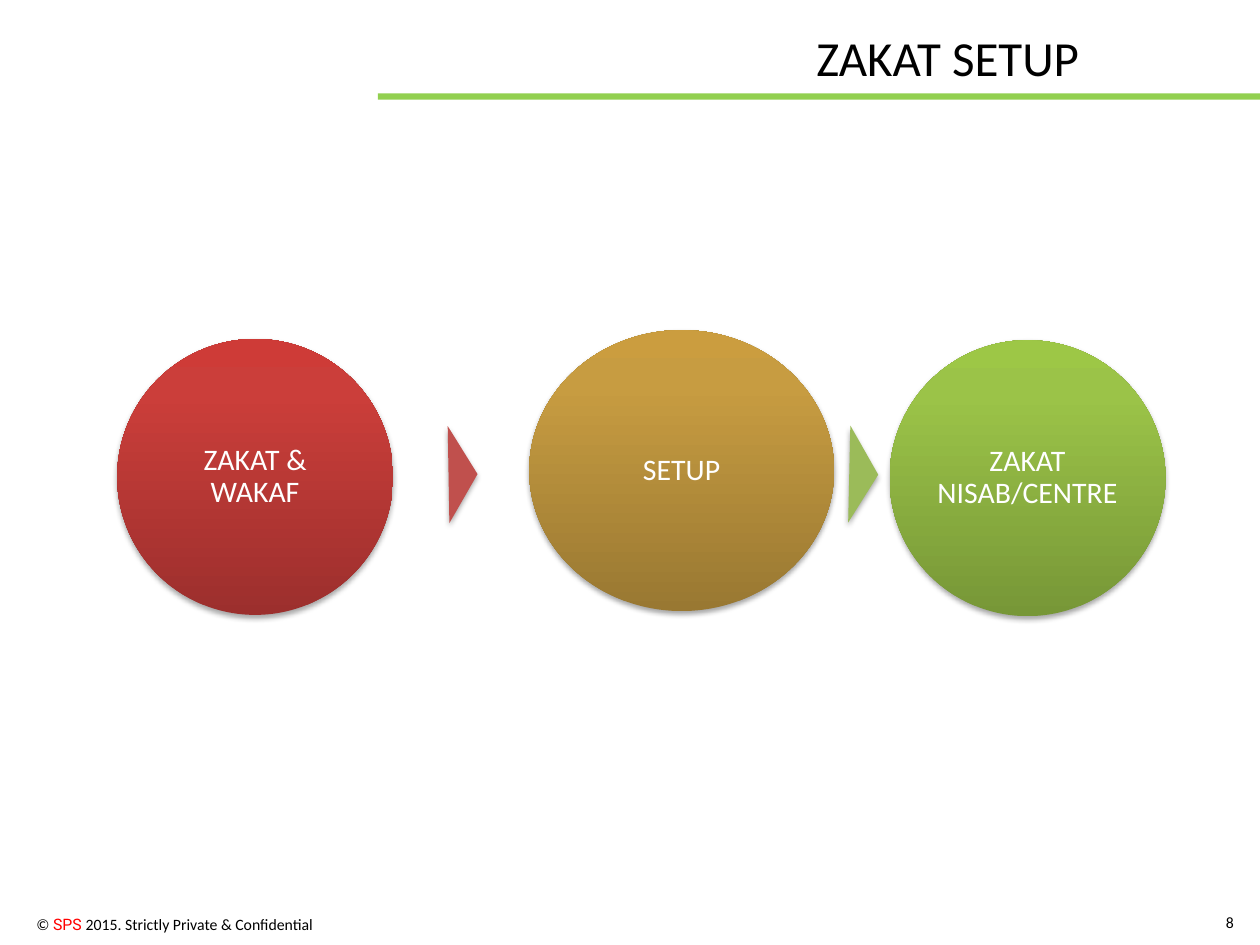
from lxml import etree
from pptx import Presentation, util as u
from pptx.dml.color import RGBColor
from pptx.enum import shapes, text
from pptx.oxml import parse_xml
from pptx.oxml.ns import nsdecls

COLUMNS, ROWS = 100, 75  # square grid over the slide
CELL = u.Inches(10) // COLUMNS
SHAPE = shapes.MSO_SHAPE
ALIGN = text.PP_ALIGN
MIDDLE = text.MSO_ANCHOR.MIDDLE


def color(value):
    return RGBColor.from_string(value)


def place(box, left, top, width, height):
    """Turn grid lengths inside a region into slide lengths."""
    return [round(n * CELL) for n in (box[0] + left, box[1] + top, width, height)]


def write(frame, runs, size, align=ALIGN.LEFT, **formats):
    for name, value in formats.items():
        setattr(frame, name, value)
    paragraph = frame.paragraphs[0]
    paragraph.alignment = align
    for words, font_name, ink in runs:
        run = paragraph.add_run()
        run.text = words
        for name, value in {"name": font_name, "size": u.Pt(size)}.items():
            setattr(run.font, name, value)
        run.font.color.rgb = color(ink)
    return paragraph


def add_plain(slide, kind, position, fill=None):
    shape = slide.shapes.add_shape(kind, *position)
    shape.shadow.inherit = False
    shape.line.fill.background()
    if fill:
        shape.fill.solid()
        shape.fill.fore_color.rgb = color(fill)
    return shape


def add_shadow(shape):
    effects = shape._element.spPr.find("{*}effectLst")
    effects.append(parse_xml(
        f'<a:outerShdw {nsdecls("a")} blurRad="{u.Pt(3.1)}" dist="{u.Pt(1.8)}" '
        'dir="5400000" rotWithShape="0"><a:srgbClr val="000000">'
        '<a:alpha val="35000"/></a:srgbClr></a:outerShdw>'))


def shade_upwards(shape, stops):
    """Three-stop gradient running from the bottom to the top."""
    shape.fill.gradient()
    shape.fill.gradient_angle = 90
    stop_list = shape._element.spPr.find("{*}gradFill/{*}gsLst")
    for old in list(stop_list):
        stop_list.remove(old)
    for percent, value in zip((0, 80, 100), stops):
        stop = etree.SubElement(stop_list, stop_list.tag.replace("gsLst", "gs"),
                                pos=str(percent * 1000))
        etree.SubElement(stop, stop.tag.replace("}gs", "}srgbClr"), val=value)


def add_header(slide, box):
    # Green rule along the bottom of the header
    add_plain(slide, SHAPE.RECTANGLE, place(box, 0, 5.7, box[2], 0.5), "92D050")
    title = slide.shapes.add_textbox(*place(box, 33.8, 0, 23.1, 5.7))
    write(title.text_frame, [("ZAKAT SETUP", "Calibri", "000000")], 28,
          word_wrap=False)


def add_flow(slide, box):
    steps = [  # label, left, top, width, height, gradient
        ("ZAKAT & WAKAF", 0, 0.7, 21.9, 21.9, ("9C2F2D", "CB3E3A", "CE3B37")),
        ("SETUP", 32.7, 0, 24.2, 22.3, ("997832", "C79C41", "CB9D3F")),
        ("ZAKAT NISAB/CENTRE", 61.3, 0.8, 21.9, 21.9,
         ("779737", "9BC348", "9DC746")),
    ]
    arrows = [(23.6, 89, "C0504D"), (55.4, 91.3, "9BBB59")]
    insets = {f"margin_{side}": u.Inches(0.02)
              for side in ("left", "top", "right", "bottom")}

    # Step circles
    for label, left, top, width, height, stops in steps:
        circle = add_plain(slide, SHAPE.OVAL, place(box, left, top, width, height))
        shade_upwards(circle, stops)
        add_shadow(circle)
        paragraph = write(circle.text_frame, [(label, "Calibri", "FFFFFF")], 17,
                          ALIGN.CENTER, word_wrap=True, vertical_anchor=MIDDLE,
                          **insets)
        paragraph.line_spacing = 0.9

    # Triangles pointing to the next step
    for left, angle, fill in arrows:
        arrow = add_plain(slide, SHAPE.ISOSCELES_TRIANGLE,
                          place(box, left, 10.3, 7.7, 2.3), fill)
        arrow.rotation = angle
        add_shadow(arrow)


def add_footer(slide, box):
    notice = slide.shapes.add_textbox(*place(box, 0, 0.9, 29.1, 2.5))
    write(notice.text_frame,
          [("© ", "Calibri", "000000"), ("SPS ", "Roboto", "FF0000"),
           ("2015. Strictly Private & Confidential", "Calibri", "000000")],
          9, ALIGN.RIGHT, word_wrap=True)
    number = slide.shapes.add_textbox(*place(box, box[2] - 4, 0, 4, 4))
    write(number.text_frame, [("8", "Calibri", "000000")], 9, ALIGN.RIGHT,
          word_wrap=True, vertical_anchor=MIDDLE)


def main():
    deck = Presentation()
    deck.slide_width, deck.slide_height = COLUMNS * CELL, ROWS * CELL
    slide = deck.slides.add_slide(deck.slide_layouts[6])
    # Regions: left, top, width, height in grid cells
    add_header(slide, (30, 1.7, 70, 6.2))
    add_flow(slide, (9.3, 26.2, 83.2, 22.7))
    add_footer(slide, (-3.3, 71.2, 102.2, 4))
    deck.save("out.pptx")


if __name__ == "__main__":
    main()
